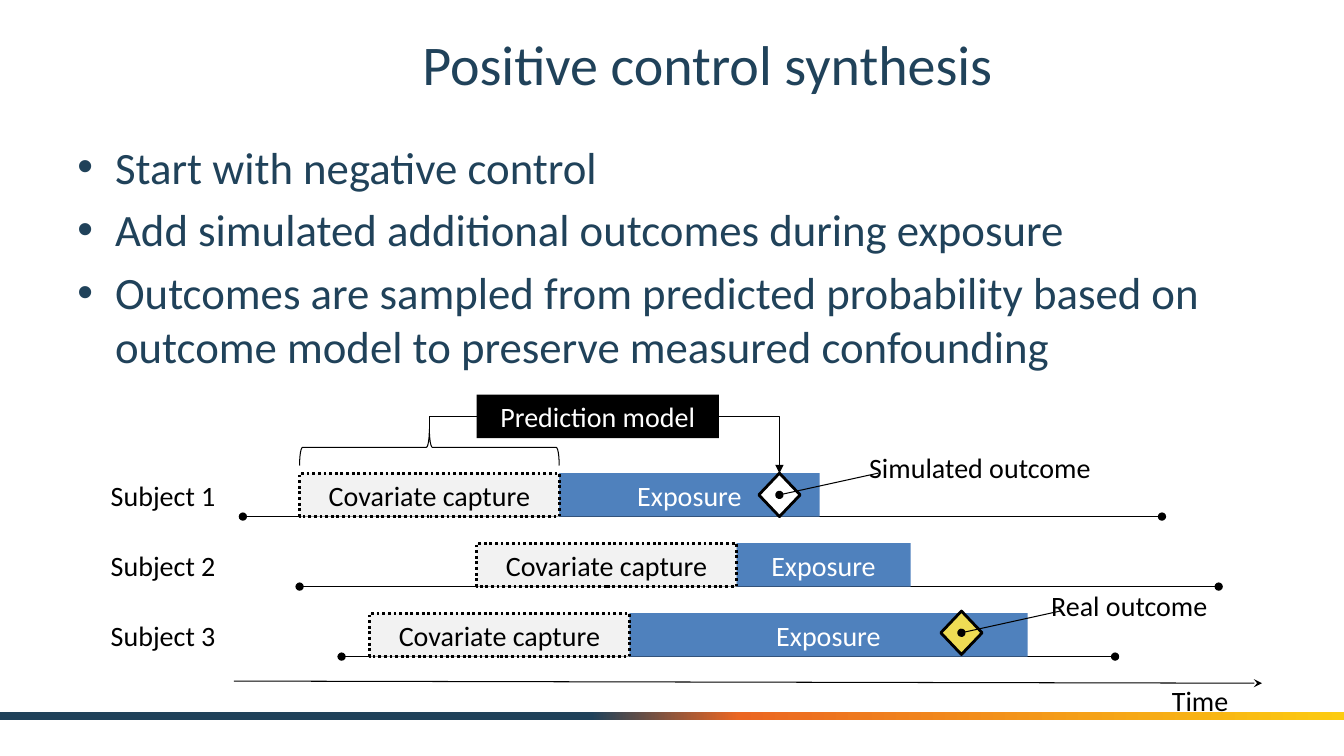
import pptx
import pptx.dml.color
import pptx.enum.dml
import pptx.enum.shapes
import pptx.enum.text
import pptx.oxml
import pptx.oxml.ns
import pptx.util

Pt = pptx.util.Pt
Shape = pptx.enum.shapes.MSO_SHAPE
Link = pptx.enum.shapes.MSO_CONNECTOR
Align = pptx.enum.text.PP_ALIGN
Anchor = pptx.enum.text.MSO_ANCHOR

COLORS = {
    "navy": "20425A", "orange": "EB6622", "gold": "FCCB10",
    "black": "000000", "white": "FFFFFF", "blue": "4F81BD",
    "grey": "F2F2F2", "yellow": "EEDC54",
}
FONT = "Calibri"
ROW_STEP, BAR_HEIGHT, CAPTURE_WIDTH = 50, 31, 185.5
DIAMOND_WIDTH = 29.5
BULLETS = [
    "Start with negative control",
    "Add simulated additional outcomes during exposure",
    "Outcomes are sampled from predicted probability based on "
    "outcome model to preserve measured confounding",
]
# label, observation start, observation end, capture start, exposure width
SUBJECTS = [
    ("Subject 1", 101.5, 758, 142, 186),
    ("Subject 2", 142, 798.5, 268.5, 124.5),
    ("Subject 3", 172, 724.5, 192, 284.5),
]


def rgb(name):
    return pptx.dml.color.RGBColor.from_string(COLORS[name])


def write(para, text, size, color):
    span = para.add_run()
    span.text = text
    span.font.name = FONT
    span.font.size = Pt(size)
    span.font.color.rgb = rgb(color)


def place(shape, left, top, width, height):
    shape.left, shape.top = Pt(left), Pt(top)
    shape.width, shape.height = Pt(width), Pt(height)


def add_label(page, text, left, top, width):
    box = page.shapes.add_textbox(Pt(left), Pt(top), Pt(width), Pt(37))
    box.text_frame.word_wrap = True
    write(box.text_frame.paragraphs[0], text, 20, "black")


def add_block(page, kind, left, top, width, height, fill=None, line=None):
    block = page.shapes.add_shape(kind, Pt(left), Pt(top), Pt(width), Pt(height))
    block.shadow.inherit = False
    if fill:
        block.fill.solid()
        block.fill.fore_color.rgb = rgb(fill)
    else:
        block.fill.background()
    if line:
        block.line.color.rgb = rgb("black")
        block.line.width = Pt(line)
    else:
        block.line.fill.background()
    return block


def add_bar(page, text, left, top, width, fill, color, line=None):
    bar = add_block(page, Shape.RECTANGLE, left, top, width, BAR_HEIGHT, fill, line)
    frame = bar.text_frame
    frame.vertical_anchor = Anchor.MIDDLE
    frame.paragraphs[0].alignment = Align.CENTER
    write(frame.paragraphs[0], text, 20, color)
    return bar


def add_line(page, start, end, head=None, tail=None, kind=Link.STRAIGHT):
    line = page.shapes.add_connector(kind, *(Pt(value) for value in start + end))
    line.line.color.rgb = rgb("black")
    line.line.width = Pt(0.75)
    outline = line.line._get_or_add_ln()
    for tag, style in (("a:headEnd", head), ("a:tailEnd", tail)):
        if style:
            mark = pptx.oxml.parse_xml(f"<{tag} {pptx.oxml.ns.nsdecls('a')}/>")
            mark.set("type", style)
            outline.append(mark)
    effects = pptx.oxml.parse_xml(f"<a:effectLst {pptx.oxml.ns.nsdecls('a')}/>")
    line._element.spPr.append(effects)
    return line


def add_corner(page, source, source_site, target, target_site, start, end, tail=None):
    """Join two shapes by one horizontal and one vertical stretch."""
    corner = add_line(page, start, end, tail=tail, kind=Link.ELBOW)
    corner._element.spPr.prstGeom.set("prst", "bentConnector2")
    corner.begin_connect(source, source_site)
    corner.end_connect(target, target_site)
    corner.begin_x, corner.begin_y = Pt(start[0]), Pt(start[1])
    corner.end_x, corner.end_y = Pt(end[0]), Pt(end[1])


def add_footer_band(page, left, top, width, height):
    band = add_block(page, Shape.RECTANGLE, left, top, width, height, "navy")
    band.fill.gradient()
    band.fill.gradient_angle = 0
    stops = band._element.spPr.find(".//" + pptx.oxml.ns.qn("a:gsLst"))
    for stop in list(stops):
        stops.remove(stop)
    for percent, name in ((44, "navy"), (55, "orange"), (100, "gold")):
        stops.append(pptx.oxml.parse_xml(
            f'<a:gs {pptx.oxml.ns.nsdecls("a")} pos="{percent * 1000}">'
            f'<a:srgbClr val="{COLORS[name]}"/></a:gs>'))


def fill_title(title, left, top, width, height):
    place(title, left, top, width, height)
    frame = title.text_frame
    frame.auto_size = pptx.enum.text.MSO_AUTO_SIZE.NONE
    frame.vertical_anchor = Anchor.MIDDLE
    frame.paragraphs[0].alignment = Align.CENTER
    write(frame.paragraphs[0], "Positive control synthesis", 40, "navy")


def fill_bullets(body, left, top, width, height):
    place(body, left, top, width, height)
    frame = body.text_frame
    frame.auto_size = pptx.enum.text.MSO_AUTO_SIZE.NONE
    for index, text in enumerate(BULLETS):
        para = frame.add_paragraph() if index else frame.paragraphs[0]
        para.font.color.rgb = rgb("navy")
        if not index:
            para.space_before = Pt(0)
        write(para, text, 32, "navy")


def add_subject(page, subject, left, top):
    label, begin, finish, capture, exposure_width = subject
    base = top + BAR_HEIGHT
    add_label(page, label, left, top, 107)
    add_line(page, (left + begin, base), (left + finish, base), "oval", "oval")
    add_bar(page, "Exposure", left + capture + CAPTURE_WIDTH, top,
            exposure_width, "blue", "white")
    bar = add_bar(page, "Covariate capture", left + capture, top,
                  CAPTURE_WIDTH, "grey", "black", 2)
    # Square dots match the preset sysDot
    bar.line.dash_style = pptx.enum.dml.MSO_LINE.ROUND_DOT


def add_outcome(page, text, left, top, fill, label_width):
    """Draw a diamond with its caption and pointer."""
    diamond = add_block(page, Shape.FLOWCHART_DECISION, left, top,
                        DIAMOND_WIDTH, BAR_HEIGHT, fill, 2)
    x, y = left + DIAMOND_WIDTH / 2, top + BAR_HEIGHT / 2
    add_label(page, text, x + 57, y - 35.5, label_width)
    add_line(page, (x + 70.5, y - 15.5), (x, y), tail="oval")
    return diamond


def add_prediction_model(page, left, top, diamond):
    model_left, model_width, middle = left + 268.5, 173, top + BAR_HEIGHT / 2
    model = add_bar(page, "Prediction model", model_left, top, model_width,
                    "black", "white")
    center, brace_depth = left + SUBJECTS[0][3] + CAPTURE_WIDTH / 2, 26
    brace = add_block(page, Shape.RIGHT_BRACE, center - brace_depth / 2,
                      top + 37.5 - CAPTURE_WIDTH / 2, brace_depth,
                      CAPTURE_WIDTH, line=0.75)
    brace.rotation = 270
    add_corner(page, model, 1, brace, 1, (model_left, middle), (center, top + 24.5))
    add_corner(page, model, 3, diamond, 0, (model_left + model_width, middle),
               (diamond.left.pt + DIAMOND_WIDTH / 2, diamond.top.pt), "triangle")


def add_timeline(page, left, top):
    add_line(page, (left + 95, top + 204.5), (left + 829.5, top + 206), tail="stealth")
    add_label(page, "Time", left + 758, top + 202.5, 66)
    rows = top + 56
    for index, subject in enumerate(SUBJECTS):
        add_subject(page, subject, left, rows + index * ROW_STEP)
    simulated = add_outcome(page, "Simulated outcome", left + 470, rows, "white", 208)
    add_outcome(page, "Real outcome", left + 600, rows + 2 * ROW_STEP - 1.5,
                "yellow", 152)
    add_prediction_model(page, left, top, simulated)


def main():
    deck = pptx.Presentation()
    deck.slide_width, deck.slide_height = Pt(960), Pt(540)
    page = deck.slides.add_slide(deck.slide_layouts[1])
    add_footer_band(page, 0, 508.5, 960, 5.5)
    fill_title(page.shapes.title, 98.5, 12, 813.5, 66)
    fill_bullets(page.placeholders[1], 48, 96, 864, 386.5)
    add_timeline(page, 72, 282)
    deck.save("out.pptx")


if __name__ == "__main__":
    main()
